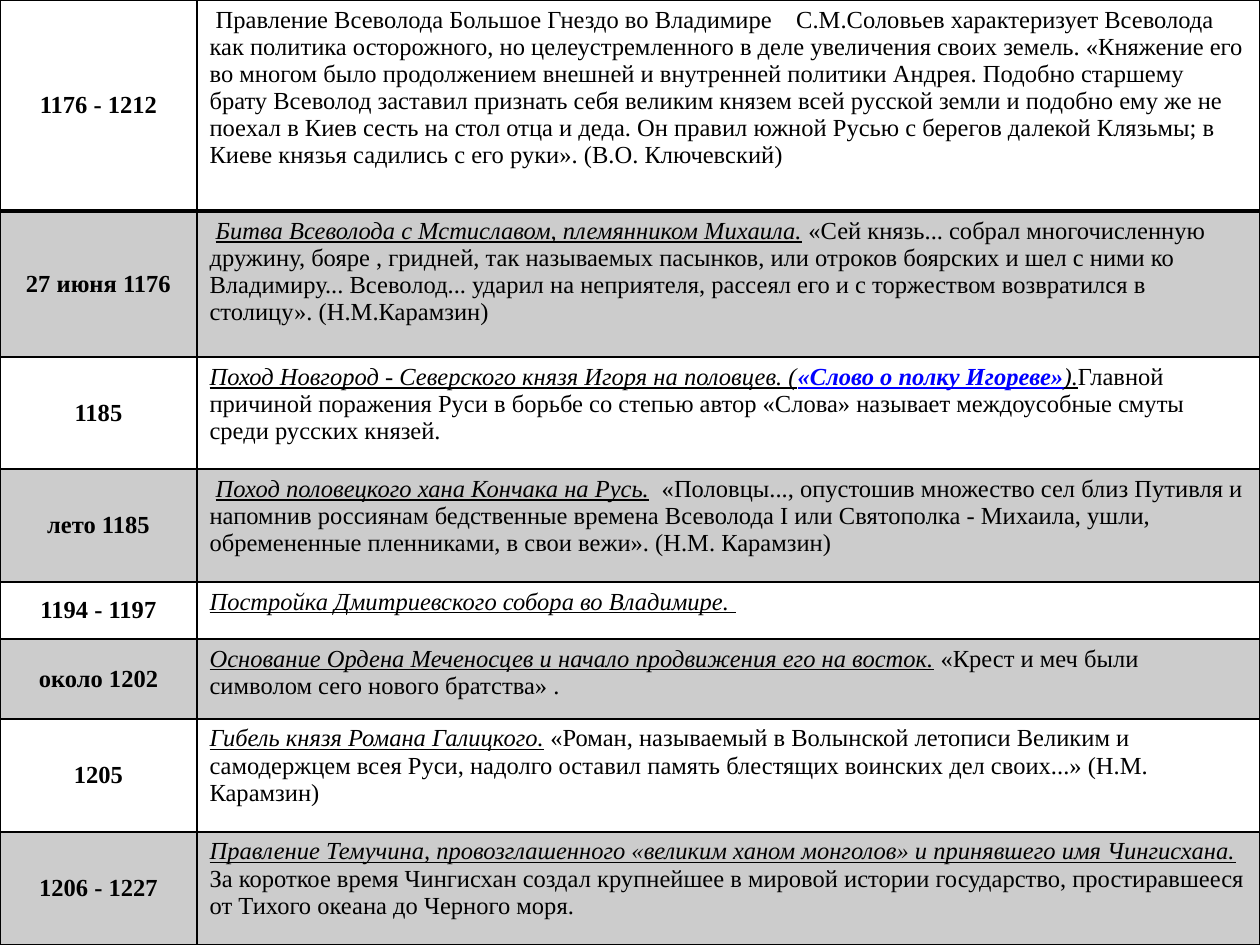
from lxml import etree
from pptx import Presentation
from pptx.dml.color import RGBColor
from pptx.enum.text import MSO_ANCHOR, PP_ALIGN
from pptx.oxml.ns import qn
from pptx.util import Pt

PX = 914400 // 126
SLIDE_WIDTH, SLIDE_HEIGHT = 1260, 945
BLACK = RGBColor(0x00, 0x00, 0x00)
BLUE = RGBColor(0x00, 0x00, 0xFF)
BAND_OPACITY = 20
FONT = "Times New Roman"
DATE_WIDTH = 197

PLAIN, EVENT, WORK = "plain", "event", "work"

CHRONICLE = [
    (211, "1176 - 1212", [
        (PLAIN, " Правление Всеволода Большое Гнездо во Владимире    С.М.Соловьев характеризует Всеволода "
                "как политика осторожного, но целеустремленного в деле увеличения своих земель. «Княжение его "
                "во многом было продолжением внешней и внутренней политики Андрея. Подобно старшему "
                "брату Всеволод заставил признать себя великим князем всей русской земли и подобно ему же не "
                "поехал в Киев сесть на стол отца и деда. Он правил южной Русью с берегов далекой Клязьмы; в "
                "Киеве князья садились с его руки». (В.О. Ключевский)"),
    ]),
    (146, "27 июня 1176", [
        (PLAIN, " "),
        (EVENT, "Битва Всеволода с Мстиславом, племянником Михаила."),
        (PLAIN, " «Сей князь... собрал многочисленную дружину, бояре , гридней, так называемых пасынков, "
                "или отроков боярских и шел с ними ко Владимиру... Всеволод... ударил на неприятеля, "
                "рассеял его и с торжеством возвратился в столицу». (Н.М.Карамзин)"),
    ]),
    (112, "1185", [
        (EVENT, "Поход Новгород - Северского князя Игоря на половцев. ("),
        (WORK, "«Слово о полку Игореве»"),
        (EVENT, ")."),
        (PLAIN, "Главной причиной поражения Руси в борьбе со степью автор «Слова» называет "
                "междоусобные смуты среди русских князей."),
    ]),
    (113, "лето 1185", [
        (PLAIN, " "),
        (EVENT, "Поход половецкого хана Кончака на Русь."),
        (PLAIN, "  «Половцы..., опустошив множество сел близ Путивля и напомнив россиянам бедственные "
                "времена Всеволода I или Святополка - Михаила, ушли, обремененные пленниками, "
                "в свои вежи». (Н.М. Карамзин)"),
    ]),
    (57, "1194 - 1197", [
        (EVENT, "Постройка Дмитриевского собора во Владимире. "),
        (PLAIN, " "),
    ]),
    (80, "около 1202", [
        (EVENT, "Основание Ордена Меченосцев и начало продвижения его на восток."),
        (PLAIN, " «Крест и меч были символом сего нового братства» ."),
    ]),
    (113, "1205", [
        (EVENT, "Гибель князя Романа Галицкого."),
        (PLAIN, " «Роман, называемый в Волынской летописи Великим и самодержцем всея Руси, надолго "
                "оставил память блестящих воинских дел своих...» (Н.М. Карамзин)"),
    ]),
    (113, "1206 - 1227", [
        (EVENT, "Правление Темучина, провозглашенного «великим ханом монголов» и принявшего имя Чингисхана."),
        (PLAIN, " За короткое время Чингисхан создал крупнейшее в мировой истории государство, "
                "простиравшееся от Тихого океана до Черного моря."),
    ]),
]


def set_border(cell, side, points):
    border = etree.SubElement(cell._tc.get_or_add_tcPr(), qn(f"a:{side}"), w=str(Pt(points)))
    paint = etree.SubElement(border, qn("a:solidFill"))
    etree.SubElement(paint, qn("a:srgbClr"), val=str(BLACK))


def format_cell(cell, top, bottom, banded):
    for side, points in (("lnL", 1), ("lnR", 1), ("lnT", top), ("lnB", bottom)):
        set_border(cell, side, points)
    if banded:
        cell.fill.solid()
        cell.fill.fore_color.rgb = BLACK
        color = cell._tc.tcPr.find(f"{qn('a:solidFill')}/{qn('a:srgbClr')}")
        etree.SubElement(color, qn("a:alpha"), val=str(BAND_OPACITY * 1000))
    else:
        cell.fill.background()


def write_paragraph(cell, parts, bold=False):
    paragraph = cell.text_frame.paragraphs[0]
    paragraph.font.name = FONT
    paragraph.font.size = Pt(14)
    paragraph.font.bold = bold
    for style, wording in parts:
        run = paragraph.add_run()
        run.text = wording
        run.font.color.rgb = BLUE if style == WORK else BLACK
        if style != PLAIN:
            run.font.italic = True
            run.font.underline = True
        if style == WORK:
            run.font.bold = True
    return paragraph


def add_chronicle(slide, left, top, width, height):
    chronicle = slide.shapes.add_table(
        len(CHRONICLE), 2, left * PX, top * PX, width * PX, height * PX).table
    chronicle.first_row = False
    chronicle.horz_banding = False
    chronicle.columns[0].width = DATE_WIDTH * PX
    chronicle.columns[1].width = (width - DATE_WIDTH) * PX
    for index, (row_height, date, story) in enumerate(CHRONICLE):
        chronicle.rows[index].height = row_height * PX
        date_cell, story_cell = chronicle.rows[index].cells
        for cell in (date_cell, story_cell):
            format_cell(cell, 2 if index == 1 else 1, 2 if index == 0 else 1, index % 2 == 1)
        date_cell.vertical_anchor = MSO_ANCHOR.MIDDLE
        write_paragraph(date_cell, [(PLAIN, date)], bold=True).alignment = PP_ALIGN.CENTER
        write_paragraph(story_cell, story)


def main():
    deck = Presentation()
    deck.slide_width = SLIDE_WIDTH * PX
    deck.slide_height = SLIDE_HEIGHT * PX
    slide = deck.slides.add_slide(deck.slide_layouts[6])
    add_chronicle(slide, 0, 0, SLIDE_WIDTH, SLIDE_HEIGHT)
    deck.save("out.pptx")


if __name__ == "__main__":
    main()
